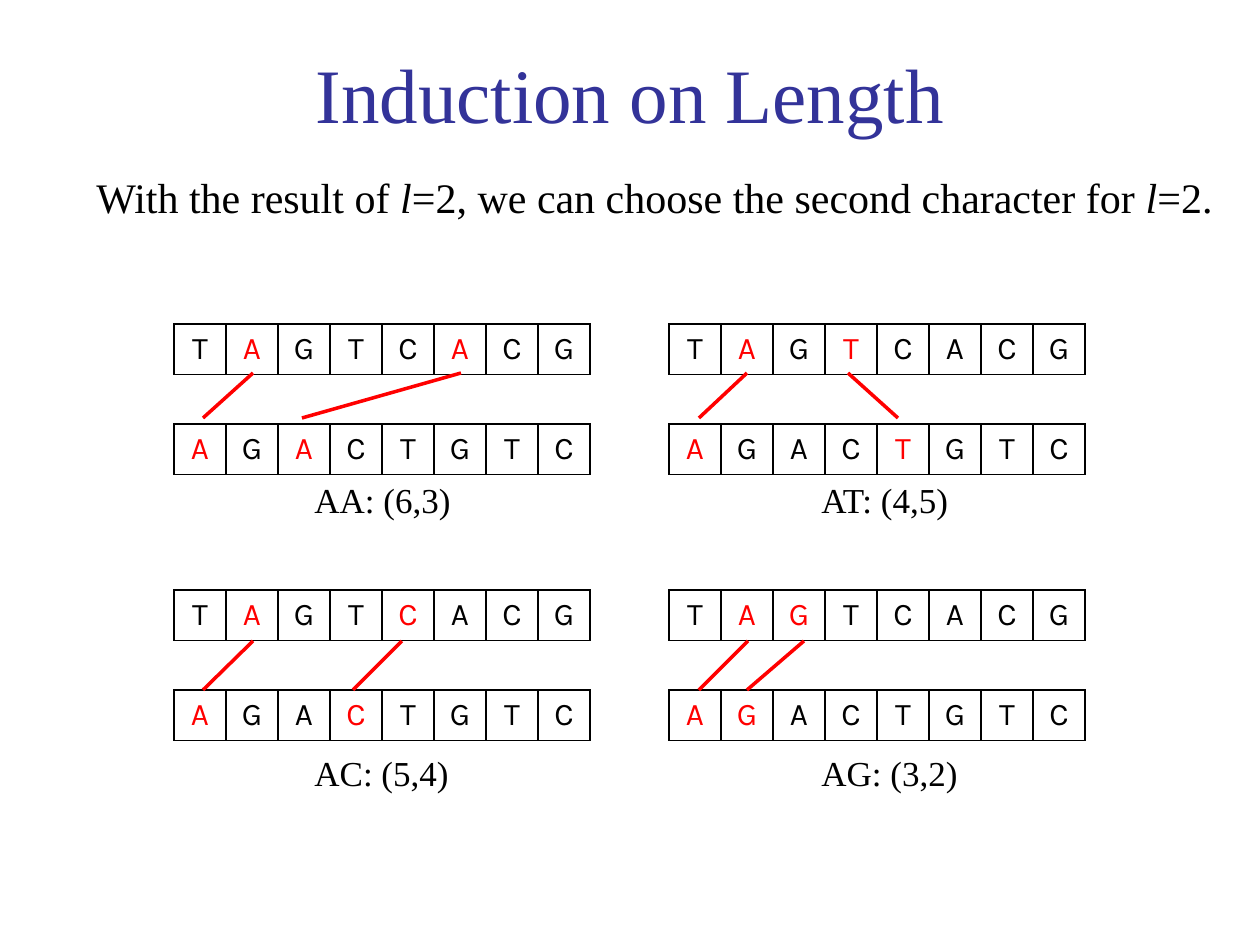
from dataclasses import dataclass

from lxml import etree
from pptx import Presentation
from pptx.dml.color import RGBColor
from pptx.enum.shapes import MSO_CONNECTOR
from pptx.enum.text import MSO_ANCHOR, MSO_AUTO_SIZE, PP_ALIGN
from pptx.oxml.ns import qn
from pptx.util import Emu, Pt

STRAIGHT = MSO_CONNECTOR.STRAIGHT
BOTTOM = MSO_ANCHOR.BOTTOM
NO_AUTOFIT = MSO_AUTO_SIZE.NONE
CENTER = PP_ALIGN.CENTER

PX_PER_INCH = 126
CELL_WIDTH, CELL_HEIGHT = 52, 50
ROW_STEP = 100
LABEL_WIDTH, LABEL_HEIGHT = 179, 55
UPPER_SEQUENCE = "TAGTCACG"
LOWER_SEQUENCE = "AGACTGTC"


@dataclass(frozen=True)
class Theme:
    serif: str = "Times New Roman"
    sans: str = "Karla"
    title: RGBColor = RGBColor(0x33, 0x33, 0x99)
    text: RGBColor = RGBColor(0, 0, 0)
    match: RGBColor = RGBColor(0xFF, 0, 0)
    title_size: int = 44
    body_size: int = 24
    label_size: int = 20
    cell_size: int = 18
    border_width: int = 1
    match_width: int = 2


@dataclass(frozen=True)
class Alignment:
    left: int
    top: int
    label: str
    label_left: int
    label_top: int
    upper_matches: tuple  # matched columns in the upper sequence
    lower_matches: tuple  # matched columns in the lower sequence
    line_ends: tuple  # (upper x, lower x) of each match line
    line_heights: tuple  # upper y and lower y of the match lines


THEME = Theme()
ALIGNMENTS = (
    Alignment(174, 324, "AA: (6,3)", 302, 472, (1, 5), (0, 2),
              ((253, 203), (461, 302)), (373, 418)),
    Alignment(669, 324, "AT: (4,5)", 809, 472, (1, 3), (0, 4),
              ((747, 699), (848, 898)), (373, 418)),
    Alignment(174, 590, "AC: (5,4)", 302, 745, (1, 4), (0, 3),
              ((253, 203), (402, 353)), (641, 690)),
    Alignment(669, 590, "AG: (3,2)", 809, 745, (1, 2), (0, 1),
              ((748, 699), (804, 747)), (641, 690)),
)


def px(length):
    return Emu(round(length * 914400 / PX_PER_INCH))


def style_span(span, font, size, color, italic=False):
    span.font.name = font
    span.font.size = Pt(size)
    span.font.color.rgb = color
    span.font.italic = italic


def add_title(page, text):
    title = page.shapes.title
    title.left, title.top, title.width, title.height = map(px, (105, 39, 1050, 106))
    frame = title.text_frame
    frame.text = text
    frame.auto_size = NO_AUTOFIT
    frame.vertical_anchor = BOTTOM
    para = frame.paragraphs[0]
    para.alignment = CENTER
    style_span(para.runs[0], THEME.serif, THEME.title_size, THEME.title)


def add_text(page, left, top, width, height, spans, size):
    """Add one line of text from (text, italic) pairs."""
    box = page.shapes.add_textbox(*map(px, (left, top, width, height)))
    box.text_frame.word_wrap = True
    para = box.text_frame.paragraphs[0]
    for text, italic in spans:
        span = para.add_run()
        span.text = text
        style_span(span, THEME.serif, size, THEME.text, italic)


def add_borders(cell):
    properties = cell._tc.get_or_add_tcPr()
    for side in ("a:lnL", "a:lnR", "a:lnT", "a:lnB"):
        border = etree.SubElement(properties, qn(side), w=str(Pt(THEME.border_width)))
        fill = etree.SubElement(border, qn("a:solidFill"))
        etree.SubElement(fill, qn("a:srgbClr"), val=str(THEME.text))


def add_sequence(page, left, top, letters, matches):
    width = CELL_WIDTH * len(letters)
    frame = page.shapes.add_table(
        1, len(letters), *map(px, (left, top, width, CELL_HEIGHT)))
    table = frame.table
    table.first_row = table.horz_banding = False
    for column, letter in enumerate(letters):
        table.columns[column].width = px(CELL_WIDTH)
        cell = table.cell(0, column)
        add_borders(cell)
        cell.fill.background()
        cell.text_frame.text = letter
        para = cell.text_frame.paragraphs[0]
        para.alignment = CENTER
        color = THEME.match if column in matches else THEME.text
        style_span(para.runs[0], THEME.sans, THEME.cell_size, color)


def add_match_line(page, start, end):
    line = page.shapes.add_connector(STRAIGHT, *map(px, start + end))
    line.line.color.rgb = THEME.match
    line.line.width = Pt(THEME.match_width)
    etree.SubElement(line._element.spPr, qn("a:effectLst"))


def add_alignment(page, item):
    # Both sequences
    add_sequence(page, item.left, item.top, UPPER_SEQUENCE, item.upper_matches)
    add_sequence(page, item.left, item.top + ROW_STEP, LOWER_SEQUENCE,
                 item.lower_matches)
    # Lines between matched letters
    upper_y, lower_y = item.line_heights
    for upper_x, lower_x in item.line_ends:
        add_match_line(page, (upper_x, upper_y), (lower_x, lower_y))
    # Label below
    add_text(page, item.label_left, item.label_top, LABEL_WIDTH, LABEL_HEIGHT,
             [(item.label, False)], THEME.label_size)


def main():
    deck = Presentation()
    deck.slide_width, deck.slide_height = px(1260), px(945)
    page = deck.slides.add_slide(deck.slide_layouts[5])

    add_title(page, "Induction on Length")
    add_text(page, 84, 165, 1144, 64, [
        ("With the result of ", False),
        ("l", True),
        ("=2, we can choose the second character for ", False),
        ("l", True),
        ("=2.", False),
    ], THEME.body_size)
    for item in ALIGNMENTS:
        add_alignment(page, item)

    deck.save("out.pptx")


if __name__ == "__main__":
    main()
